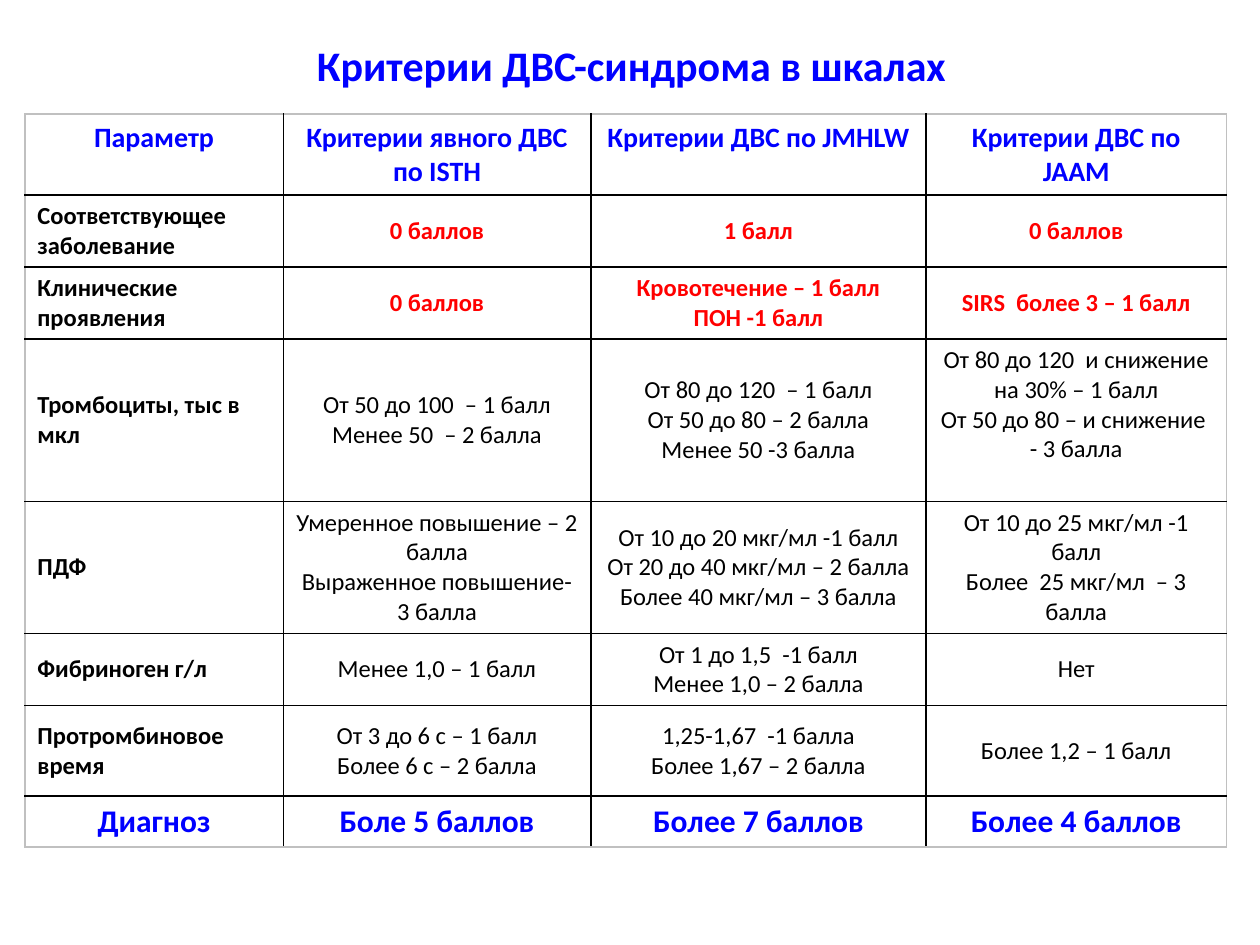
from lxml import etree
from pptx import Presentation
from pptx.dml.color import RGBColor
from pptx.enum.text import MSO_ANCHOR as Anchor, PP_ALIGN as Align
from pptx.oxml.ns import qn
from pptx.util import Cm, Pt

BLUE, RED, BLACK, GREY, WHITE = "0000FF", "FF0000", "000000", "C0C0C0", "FFFFFF"
COL_WIDTHS = [5.21, 6.2, 6.76, 6.05]
ROW_HEIGHTS = [1.63, 1.45, 1.45, 3.28, 2.66, 1.45, 1.83, 1.02]
PLATELETS, DIAGNOSIS = 3, 7  # rows with their own alignment

# A line break separates paragraphs within a cell
ROWS = [
    ["Параметр", "Критерии явного ДВС по ISTH",
     "Критерии ДВС по JMHLW", "Критерии ДВС по JAAM"],
    ["Соответствующее заболевание", "0 баллов", "1 балл", "0 баллов"],
    ["Клинические проявления", "0 баллов",
     "Кровотечение – 1 балл\nПОН -1 балл", "SIRS  более 3 – 1 балл"],
    ["Тромбоциты, тыс в мкл",
     "От 50 до 100  – 1 балл\nМенее 50  – 2 балла",
     "От 80 до 120  – 1 балл\nОт 50 до 80 – 2 балла\nМенее 50 -3 балла",
     "От 80 до 120  и снижение на 30% – 1 балл\n"
     "От 50 до 80 – и снижение  - 3 балла"],
    ["ПДФ",
     "Умеренное повышение – 2 балла\nВыраженное повышение- 3 балла",
     "От 10 до 20 мкг/мл -1 балл\nОт 20 до 40 мкг/мл – 2 балла\n"
     "Более 40 мкг/мл – 3 балла",
     "От 10 до 25 мкг/мл -1 балл\nБолее  25 мкг/мл  – 3 балла"],
    ["Фибриноген г/л", "Менее 1,0 – 1 балл",
     "От 1 до 1,5  -1 балл\nМенее 1,0 – 2 балла", "Нет"],
    ["Протромбиновое время",
     "От 3 до 6 с – 1 балл\nБолее 6 с – 2 балла",
     "1,25-1,67  -1 балла\nБолее 1,67 – 2 балла", "Более 1,2 – 1 балл"],
    ["Диагноз", "Боле 5 баллов", "Более 7 баллов", "Более 4 баллов"],
]


def rgb(value):
    return RGBColor.from_string(value)


def write_text(tf, text, size, color, bold, align=Align.CENTER):
    tf.word_wrap = True
    for i, line in enumerate(text.split("\n")):
        p = tf.add_paragraph() if i else tf.paragraphs[0]
        p.add_run().text = line
        p.alignment = align
        p.font.name, p.font.size, p.font.bold = "Calibri", Pt(size), bold
        p.font.color.rgb = rgb(color)


def set_borders(cell, colors):
    """Draw 1 pt borders; colors are for left, right, top, bottom."""
    tc_pr = cell._tc.get_or_add_tcPr()
    for i, (side, color) in enumerate(zip("LRTB", colors)):
        ln = etree.Element(qn(f"a:ln{side}"), w=str(Pt(1)))
        fill = etree.SubElement(ln, qn("a:solidFill"))
        etree.SubElement(fill, qn("a:srgbClr"), val=color)
        tc_pr.insert(i, ln)


def cell_style(row, col):
    """Return size, colour, bold and alignment of a cell."""
    if row == 0:
        return 16, BLUE, True, Align.CENTER
    if row == DIAGNOSIS:
        return 18, BLUE, True, Align.CENTER
    if col == 0:
        return 14, BLACK, True, Align.LEFT
    if row < PLATELETS:
        return 14, RED, True, Align.CENTER
    return 14, BLACK, False, Align.CENTER


def add_title(s, text):
    tf = s.shapes.add_textbox(Cm(1.3), Cm(0.53), Cm(22.86), Cm(1.55)).text_frame
    tf.vertical_anchor = Anchor.MIDDLE
    write_text(tf, text, 24, BLUE, True)


def add_criteria_table(s):
    n_rows, n_cols = len(ROWS), len(COL_WIDTHS)
    table = s.shapes.add_table(n_rows, n_cols, Cm(0.5), Cm(2.3),
                               Cm(sum(COL_WIDTHS)), Cm(sum(ROW_HEIGHTS))).table
    for column, width in zip(table.columns, COL_WIDTHS):
        column.width = Cm(width)
    for r, (texts, height) in enumerate(zip(ROWS, ROW_HEIGHTS)):
        table.rows[r].height = Cm(height)
        for c, text in enumerate(texts):
            cell = table.cell(r, c)
            cell.fill.solid()
            cell.fill.fore_color.rgb = rgb(WHITE)
            top = r == 0 or (r, c) == (PLATELETS, n_cols - 1)
            cell.vertical_anchor = Anchor.TOP if top else Anchor.MIDDLE
            size, color, bold, align = cell_style(r, c)
            write_text(cell.text_frame, text, size, color, bold, align)
            # Grey outer frame, black inner grid
            outer = (c == 0, c == n_cols - 1, r == 0, r == n_rows - 1)
            set_borders(cell, [GREY if edge else BLACK for edge in outer])


def main():
    prs = Presentation()
    prs.slide_width, prs.slide_height = Cm(25.4), Cm(19.05)
    s = prs.slides.add_slide(prs.slide_layouts[6])
    add_title(s, "Критерии ДВС-синдрома в шкалах")
    add_criteria_table(s)
    prs.save("out.pptx")


if __name__ == "__main__":
    main()
